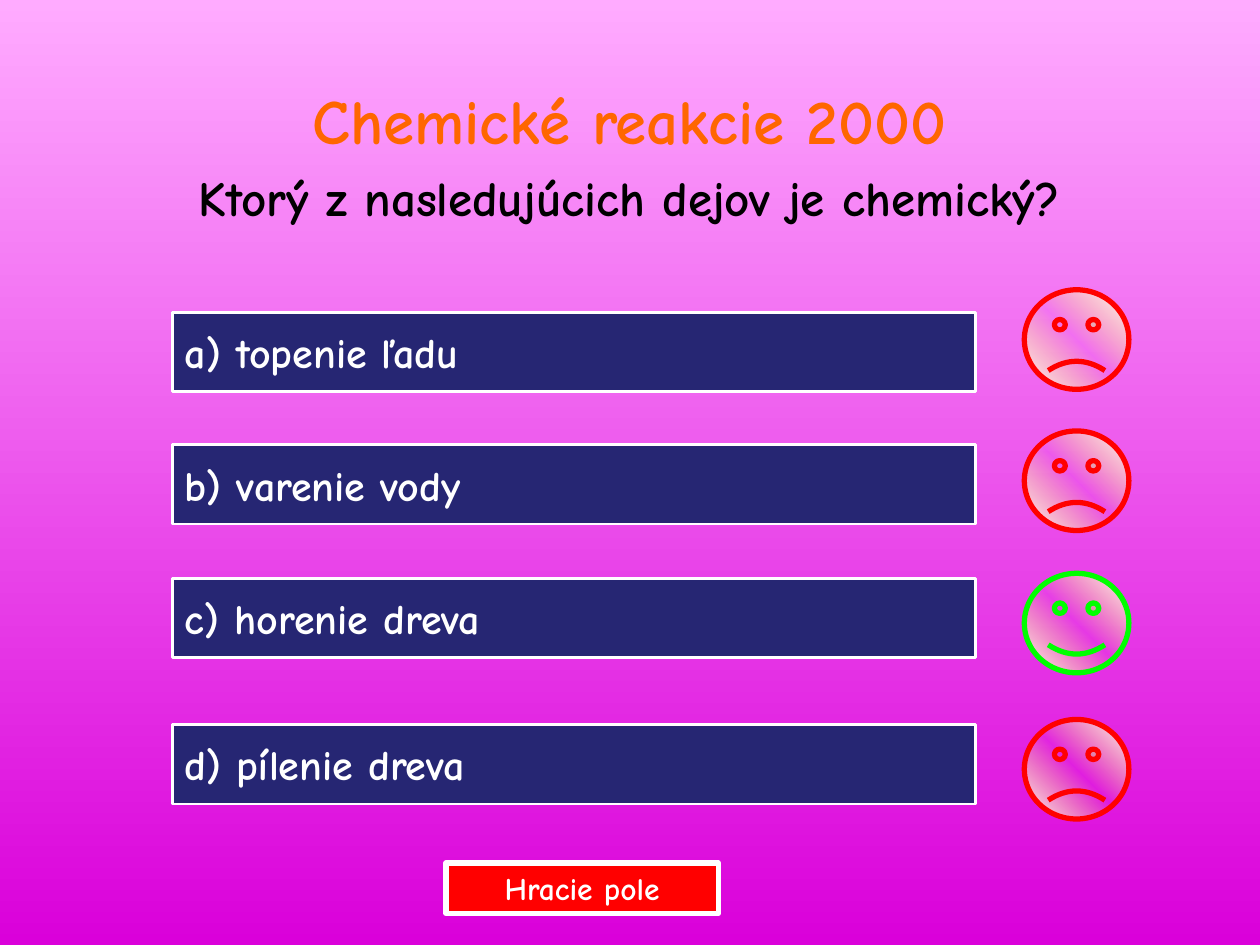
from copy import deepcopy
from dataclasses import dataclass

from lxml import etree
from pptx import Presentation, util as u
from pptx.dml.color import RGBColor
from pptx.enum import shapes, text
from pptx.oxml.ns import qn

COLUMNS, ROWS = 100, 75


@dataclass(frozen=True)
class Theme:
    font: str = "Comic Neue"
    heading: str = "FF6600"
    question: str = "000000"
    label: str = "FFFFFF"
    answer: str = "262673"
    wrong: str = "FF0000"
    right: str = "00FF00"
    heading_size: float = 36
    question_size: float = 28
    answer_size: float = 24
    button_size: float = 18
    thin: float = 1.5
    thick: float = 3


@dataclass(frozen=True)
class Stop:
    position: float
    color: str
    opacity: float = 1


@dataclass(frozen=True)
class Box:
    """A place on the grid, in columns and rows."""
    column: float
    row: float
    columns: float
    rows: float


@dataclass(frozen=True)
class Answer:
    label: str
    row: float
    face_row: float
    correct: bool = False


THEME = Theme()
BACKDROP = [Stop(0, "FFABFF"), Stop(1, "DA00DA")]
FACE_GLOW = [Stop(0, "FFFFFF"), Stop(0.5, "FFFF66", 0), Stop(1, "FFFFFF")]
ANSWERS = [
    Answer("a) topenie ľadu", 24.8, 23),
    Answer("b) varenie vody", 35.3, 34.2),
    Answer("c) horenie dreva", 45.9, 45.5, correct=True),
    Answer("d) pílenie dreva", 57.5, 57.1),
]


def rgb(color: str) -> RGBColor:
    return RGBColor.from_string(color)


def place(prs, box: Box) -> tuple[int, int, int, int]:
    column, row = prs.slide_width / COLUMNS, prs.slide_height / ROWS
    return (round(box.column * column), round(box.row * row),
            round(box.columns * column), round(box.rows * row))


def fill_gradient(fill, owner, stops: list[Stop], angle: float) -> None:
    """Fill with any number of stops; the angle runs counter-clockwise."""
    fill.gradient()
    fill.gradient_angle = angle
    stop_list = next(owner.iter(qn("a:gsLst")))
    while len(stop_list) < len(stops):
        stop_list.append(deepcopy(stop_list[0]))
    for target, element, stop in zip(fill.gradient_stops, stop_list, stops):
        target.position = stop.position
        target.color.rgb = rgb(stop.color)
        if stop.opacity < 1:
            alpha = etree.SubElement(element[0], qn("a:alpha"))
            alpha.set("val", str(round(stop.opacity * 100000)))


def write(paragraph, words: str, *, size: float, color: str,
          align=text.PP_ALIGN.LEFT, before: float = 0) -> None:
    paragraph.alignment = align
    paragraph.space_before = u.Pt(before)
    run = paragraph.add_run()
    run.text = words
    run.font.name = THEME.font
    run.font.size = u.Pt(size)
    run.font.bold = True
    run.font.color.rgb = rgb(color)


def add_outlined(prs, slide, kind, box: Box, line: str, width: float):
    shape = slide.shapes.add_shape(kind, *place(prs, box))
    shape.shadow.inherit = False
    shape.line.color.rgb = rgb(line)
    shape.line.width = u.Pt(width)
    return shape


def add_button(prs, slide, box: Box, label: str, *, fill: str, width: float,
               size: float, align=text.PP_ALIGN.LEFT) -> None:
    button = add_outlined(prs, slide, shapes.MSO_SHAPE.ACTION_BUTTON_CUSTOM,
                          box, THEME.label, width)
    button.fill.solid()
    button.fill.fore_color.rgb = rgb(fill)
    frame = button.text_frame
    frame.word_wrap = False
    frame.vertical_anchor = text.MSO_ANCHOR.MIDDLE
    write(frame.paragraphs[0], label, size=size, color=THEME.label, align=align)


def add_face(prs, slide, row: float, happy: bool) -> None:
    face = add_outlined(prs, slide, shapes.MSO_SHAPE.SMILEY_FACE,
                        Box(81.3, row, 8.3, 7.9),
                        THEME.right if happy else THEME.wrong, THEME.thick)
    face.adjustments[0] = 0.05 if happy else -0.05
    fill_gradient(face.fill, face.element, FACE_GLOW, 45)


def add_heading(prs, slide) -> None:
    title = slide.shapes.title
    title.left, title.top, title.width, title.height = place(
        prs, Box(3.9, 6, 92.1, 7.5))
    frame = title.text_frame
    frame.word_wrap = True
    frame.auto_size = text.MSO_AUTO_SIZE.NONE
    frame.vertical_anchor = text.MSO_ANCHOR.TOP
    lines = [
        ("Chemické reakcie 2000", THEME.heading_size, THEME.heading),
        ("Ktorý z nasledujúcich dejov je chemický?",
         THEME.question_size, THEME.question),
    ]
    for index, (words, size, color) in enumerate(lines):
        paragraph = frame.add_paragraph() if index else frame.paragraphs[0]
        write(paragraph, words, size=size, color=color,
              align=text.PP_ALIGN.CENTER, before=size * 0.2)


def main() -> None:
    prs = Presentation()
    prs.slide_width, prs.slide_height = u.Inches(10), u.Inches(7.5)
    slide = prs.slides.add_slide(prs.slide_layouts.get_by_name("Title Only"))
    fill_gradient(slide.background.fill, slide.element, BACKDROP, 270)
    add_heading(prs, slide)
    for answer in ANSWERS:
        add_button(prs, slide, Box(13.7, answer.row, 63.7, 6.3), answer.label,
                   fill=THEME.answer, width=THEME.thin, size=THEME.answer_size)
        add_face(prs, slide, answer.face_row, answer.correct)
    add_button(prs, slide, Box(35.4, 68.5, 21.6, 4), "Hracie pole",
               fill=THEME.wrong, width=THEME.thick, size=THEME.button_size,
               align=text.PP_ALIGN.CENTER)
    prs.save("out.pptx")


if __name__ == "__main__":
    main()
